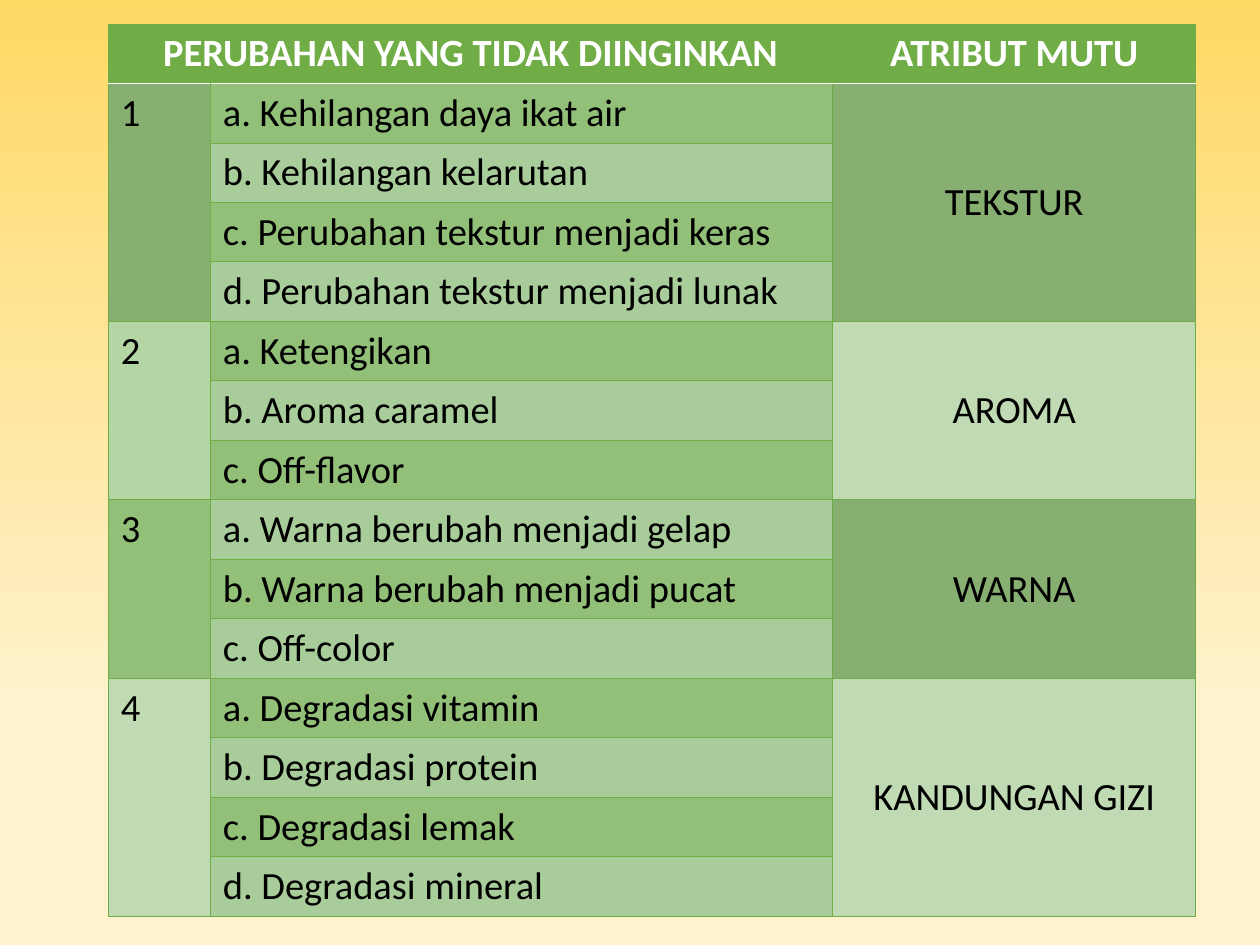
from dataclasses import dataclass

from lxml.etree import Element, SubElement
from pptx import Presentation
from pptx.dml.color import RGBColor
from pptx.enum.text import MSO_ANCHOR, PP_ALIGN
from pptx.oxml.ns import qn
from pptx.slide import Slide
from pptx.table import Table, _Cell
from pptx.util import Inches, Pt


@dataclass(frozen=True)
class Theme:
    font: str = "Calibri"
    text_size: float = 22
    text: str = "000000"
    header_text: str = "FFFFFF"
    accent: str = "70AD47"
    band_dark: str = "92C079"
    band_light: str = "A9CD9A"
    group_dark: str = "87AF72"
    group_soft: str = "B4D5A4"
    group_pale: str = "C0DBB3"
    background_top: str = "FFD966"
    background_bottom: str = "FFF2CC"
    line_width: float = 0.5
    header_line_width: float = 1


@dataclass(frozen=True)
class Group:
    attribute: str
    number_fill: str
    attribute_fill: str
    changes: tuple[str, ...]


THEME = Theme()
COLUMN_WIDTHS = (0.81, 4.94, 2.88)
ROW_HEIGHT = 0.47
GROUPS = (
    Group("TEKSTUR", THEME.group_dark, THEME.group_dark, (
        "Kehilangan daya ikat air",
        "Kehilangan kelarutan",
        "Perubahan tekstur menjadi keras",
        "Perubahan tekstur menjadi lunak",
    )),
    Group("AROMA", THEME.group_soft, THEME.group_pale, (
        "Ketengikan", "Aroma caramel", "Off-flavor",
    )),
    Group("WARNA", THEME.band_dark, THEME.group_dark, (
        "Warna berubah menjadi gelap",
        "Warna berubah menjadi pucat",
        "Off-color",
    )),
    Group("KANDUNGAN GIZI", THEME.group_pale, THEME.group_pale, (
        "Degradasi vitamin",
        "Degradasi protein",
        "Degradasi lemak",
        "Degradasi mineral",
    )),
)


def paint_background(slide: Slide) -> None:
    fill = slide.background.fill
    fill.gradient()
    fill.gradient_angle = 270
    stops = ((0, THEME.background_top), (0.74, THEME.background_bottom))
    for stop, (position, color) in zip(fill.gradient_stops, stops):
        stop.position = position
        stop.color.rgb = RGBColor.from_string(color)


def write_cell(cell: _Cell, text: str, fill: str, centered: bool = False,
               header: bool = False) -> None:
    cell.fill.solid()
    cell.fill.fore_color.rgb = RGBColor.from_string(fill)
    cell.vertical_anchor = (
        MSO_ANCHOR.MIDDLE if centered and not header else MSO_ANCHOR.TOP
    )
    paragraph = cell.text_frame.paragraphs[0]
    paragraph.alignment = PP_ALIGN.CENTER if centered else PP_ALIGN.LEFT
    run = paragraph.add_run()
    run.text = text
    font_format = {"name": THEME.font, "size": Pt(THEME.text_size), "bold": header}
    for attribute, value in font_format.items():
        setattr(run.font, attribute, value)
    color = THEME.header_text if header else THEME.text
    run.font.color.rgb = RGBColor.from_string(color)


def draw_borders(table: Table) -> None:
    regular = (THEME.accent, THEME.line_width)
    divider = (THEME.header_text, THEME.header_line_width)
    for row_index, row in enumerate(table.rows):
        edges = {
            "a:lnL": regular,
            "a:lnR": regular,
            "a:lnT": divider if row_index == 1 else regular,
            "a:lnB": divider if row_index == 0 else regular,
        }
        for cell in row.cells:
            properties = cell._tc.get_or_add_tcPr()
            for position, (tag, (color, width)) in enumerate(edges.items()):
                line = Element(qn(tag), w=str(Pt(width)))
                solid_fill = SubElement(line, qn("a:solidFill"))
                SubElement(solid_fill, qn("a:srgbClr"), val=color)
                properties.insert(position, line)


def add_group(table: Table, group: Group, number: int, first_row: int) -> int:
    last_row = first_row + len(group.changes) - 1
    for column in (0, 2):
        table.cell(first_row, column).merge(table.cell(last_row, column))
    write_cell(table.cell(first_row, 0), str(number), group.number_fill)
    write_cell(table.cell(first_row, 2), group.attribute, group.attribute_fill,
               centered=True)
    for offset, (letter, change) in enumerate(zip("abcd", group.changes)):
        row = first_row + offset
        band = THEME.band_dark if row % 2 else THEME.band_light
        write_cell(table.cell(row, 1), f"{letter}. {change}", band)
    return last_row + 1


def add_quality_table(slide: Slide) -> None:
    row_count = 1 + sum(len(group.changes) for group in GROUPS)
    table = slide.shapes.add_table(
        row_count, len(COLUMN_WIDTHS), Inches(0.86), Inches(0.19),
        Inches(sum(COLUMN_WIDTHS)), Inches(ROW_HEIGHT * row_count),
    ).table
    table.horz_banding = False
    for column, width in zip(table.columns, COLUMN_WIDTHS):
        column.width = Inches(width)
    for row in table.rows:
        row.height = Inches(ROW_HEIGHT)
    table.cell(0, 0).merge(table.cell(0, 1))
    headings = {0: "PERUBAHAN YANG TIDAK DIINGINKAN", 2: "ATRIBUT MUTU"}
    for column, heading in headings.items():
        write_cell(table.cell(0, column), heading, THEME.accent,
                   centered=True, header=True)
    next_row = 1
    for number, group in enumerate(GROUPS, start=1):
        next_row = add_group(table, group, number, next_row)
    draw_borders(table)


def main() -> None:
    presentation = Presentation()
    presentation.slide_width = Inches(10)
    presentation.slide_height = Inches(7.5)
    slide = presentation.slides.add_slide(presentation.slide_layouts[6])
    paint_background(slide)
    add_quality_table(slide)
    presentation.save("out.pptx")


if __name__ == "__main__":
    main()
